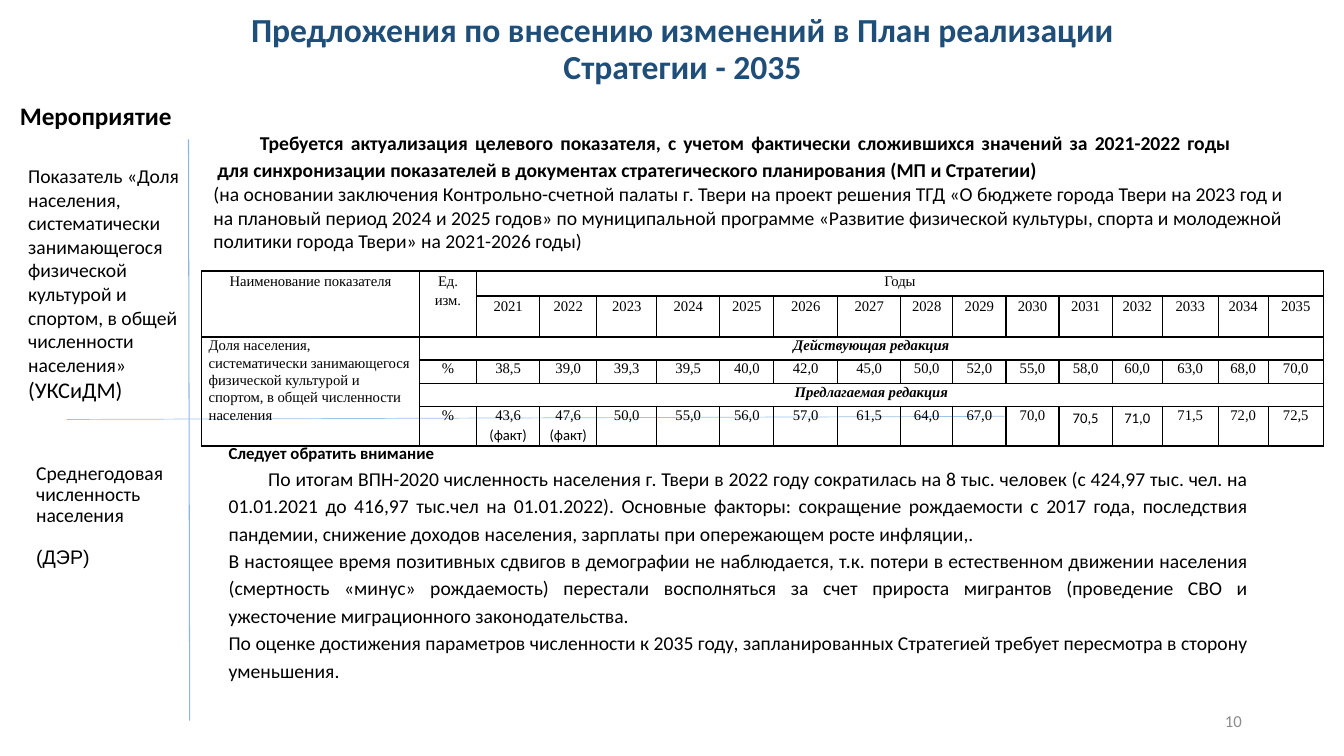
from lxml import etree
from pptx import Presentation
from pptx import util as u
from pptx.dml.color import RGBColor
from pptx.enum import shapes, text
from pptx.oxml import ns

LEFT, CENTER = text.PP_ALIGN.LEFT, text.PP_ALIGN.CENTER
RIGHT, JUSTIFY = text.PP_ALIGN.RIGHT, text.PP_ALIGN.JUSTIFY
TOP, MIDDLE = text.MSO_ANCHOR.TOP, text.MSO_ANCHOR.MIDDLE
SERIF = "Times New Roman"

YEARS = [str(year) for year in range(2021, 2036)]
CURRENT = "38,5 39,0 39,3 39,5 40,0 42,0 45,0 50,0 52,0 55,0 58,0 60,0 63,0 68,0 70,0".split()
PROPOSED = "43,6 47,6 50,0 55,0 56,0 57,0 61,5 64,0 67,0 70,0 70,5 71,0 71,5 72,0 72,5".split()
ACTUAL_YEARS = ("2021", "2022")
SANS_YEARS = ("2031", "2032")
COLUMNS = [5.49, 1.44, 1.59, 1.44, 1.51, 1.59, 1.36, 1.61, 1.59,
           1.31, 1.34, 1.34, 1.34, 1.26, 1.41, 1.26, 1.39]
ROWS = [0.63, 1.03, 0.58, 0.6, 0.58, 0.99]


def color(value):
    return RGBColor.from_string(value)


def run(content, size=14, **style):
    return dict(content=content, size=size, **style)


def para(*runs, **layout):
    return dict(runs=runs, **layout)


class SlideBuilder:
    font = "Calibri"
    ink = "000000"

    def __init__(self, slide):
        self.slide = slide

    def fill_frame(self, frame, paragraphs):
        """Fill a text frame with paragraphs, run by run."""
        for number, item in enumerate(paragraphs):
            paragraph = frame.add_paragraph() if number else frame.paragraphs[0]
            paragraph.alignment = item.get("align", LEFT)
            paragraph.line_spacing = item.get("spacing", 1.0)
            paragraph.space_before = u.Pt(item.get("before", 0))
            paragraph.space_after = u.Pt(item.get("after", 0))
            if "indent" in item:
                margin, first = item["indent"]
                properties = paragraph._p.get_or_add_pPr()
                properties.set("marL", str(u.Cm(margin)))
                properties.set("indent", str(u.Cm(first)))
            for part in item["runs"]:
                piece = paragraph.add_run()
                piece.text = part["content"]
                piece.font.size = u.Pt(part["size"])
                piece.font.name = part.get("font", self.font)
                piece.font.bold = part.get("bold", False)
                piece.font.italic = part.get("italic", False)
                piece.font.color.rgb = color(part.get("ink", self.ink))

    def place(self, shape, box):
        shape.left, shape.top, shape.width, shape.height = map(u.Cm, box)

    def title(self, box, paragraphs):
        shape = self.slide.shapes.title
        self.place(shape, box)
        shape.text_frame.auto_size = text.MSO_AUTO_SIZE.NONE
        shape.text_frame.vertical_anchor = MIDDLE
        self.fill_frame(shape.text_frame, paragraphs)

    def text(self, box, paragraphs, anchor=TOP, wrap=True, inset=0.13):
        shape = self.slide.shapes.add_textbox(*map(u.Cm, box))
        frame = shape.text_frame
        frame.word_wrap = wrap
        frame.vertical_anchor = anchor
        frame.margin_top = u.Cm(inset)
        self.fill_frame(frame, paragraphs)

    def line(self, start, end, ink, width):
        connector = self.slide.shapes.add_connector(
            shapes.MSO_CONNECTOR.STRAIGHT, *map(u.Cm, start + end))
        connector.line.color.rgb = color(ink)
        connector.line.width = u.Pt(width)
        etree.SubElement(connector._element.spPr, ns.qn("a:effectLst"))

    def table(self, left, top, columns, rows, border=None):
        """Add an unfilled table; without a border colour its edges are hidden."""
        frame = self.slide.shapes.add_table(
            len(rows), len(columns), u.Cm(left), u.Cm(top),
            u.Cm(sum(columns)), u.Cm(sum(rows)))
        table = frame.table
        table.first_row = table.horz_banding = False
        for column, width in zip(table.columns, columns):
            column.width = u.Cm(width)
        for row, height in zip(table.rows, rows):
            row.height = u.Cm(height)
        for cell in table.iter_cells():
            self.edges(cell, border)
            cell.fill.background()
        return table

    def edges(self, cell, ink):
        properties = cell._tc.get_or_add_tcPr()
        for side in ("lnL", "lnR", "lnT", "lnB"):
            edge = etree.SubElement(properties, ns.qn("a:" + side), w=str(u.Pt(1)))
            if ink:
                fill = etree.SubElement(edge, ns.qn("a:solidFill"))
                etree.SubElement(fill, ns.qn("a:srgbClr"), val=ink)
            else:
                etree.SubElement(edge, ns.qn("a:noFill"))

    def cell(self, cell, paragraphs, side=0.18):
        cell.margin_left = cell.margin_right = u.Cm(side)
        cell.margin_top = cell.margin_bottom = 0
        self.fill_frame(cell.text_frame, paragraphs)

    def text_table(self, left, top, width, height, paragraphs):
        table = self.table(left, top, [width], [height])
        self.cell(table.cell(0, 0), paragraphs, side=0.3)


def indicator_table(builder):
    table = builder.table(5.08, 6.83, COLUMNS, ROWS, border="000000")

    def put(row, column, content, rows=1, columns=1, align=CENTER, **style):
        cell = table.cell(row, column)
        if rows * columns > 1:
            cell.merge(table.cell(row + rows - 1, column + columns - 1))
        style = {"font": SERIF, **style}
        spacing = 1.15 if row < 2 else 1.06
        builder.cell(cell, [para(run(content, 10.5, **style), align=align, spacing=spacing)])

    put(0, 0, "Наименование показателя", rows=2)
    put(0, 1, "Ед. изм.", rows=2)
    put(0, 2, "Годы", columns=len(YEARS))
    put(2, 0, "Доля населения, систематически занимающегося физической культурой "
        "и спортом, в общей численности населения", rows=4, align=LEFT)
    put(2, 1, "Действующая редакция", columns=16, bold=True, italic=True)
    put(4, 1, "Предлагаемая редакция", columns=16, bold=True, italic=True)
    put(3, 1, "%")
    put(5, 1, "%")
    for column, (year, current, proposed) in enumerate(zip(YEARS, CURRENT, PROPOSED), 2):
        put(1, column, year)
        put(3, column, current)
        sans = dict(align=CENTER, spacing=1.15, after=10)
        if year in SANS_YEARS:
            paragraphs = [para(run(proposed, 10.5), **sans)]
        else:
            paragraphs = [para(run(proposed, 10.5, font=SERIF), align=CENTER, spacing=1.06)]
        if year in ACTUAL_YEARS:
            paragraphs.append(para(run("(факт)", 10.5), **sans))
        builder.cell(table.cell(5, column), paragraphs)


def main():
    presentation = Presentation()
    presentation.slide_width, presentation.slide_height = u.Cm(33.87), u.Cm(19.05)
    builder = SlideBuilder(presentation.slides.add_slide(presentation.slide_layouts[5]))

    builder.text((23.93, 17.65, 7.62, 1.02),
                 [para(run("10", 12, ink="8C8C8C"), align=RIGHT)], anchor=MIDDLE)
    builder.title((1.07, 0.51, 32.26, 1.5), [
        para(run(line, 24, bold=True, ink="1F4E79"), align=CENTER, spacing=0.9)
        for line in ("Предложения по внесению изменений в План реализации", " Стратегии - 2035 ")])
    builder.line((4.75, 3.51), (4.78, 18.16), "8EB4E3", 0.75)
    builder.line((25.32, 10.49), (1.68, 10.57), "9DC3E6", 0.5)

    builder.text((0.25, 2.39, 4.5, 1.02), [para(run("Мероприятие", 18, bold=True))], wrap=False)
    builder.text((0.46, 4.01, 4.47, 7.09), [para(
        run("Показатель «Доля населения, систематически занимающегося физической "
            "культурой и спортом, в общей численности населения» "),
        run("(УКСиДМ)", 16))])

    builder.text_table(5.13, 3.23, 26.21, 1.37, [para(
        run("Требуется актуализация целевого показателя, с учетом фактически сложившихся "
            "значений за 2021-2022 годы для синхронизации показателей в документах "
            "стратегического планирования (МП и Стратегии)", bold=True),
        align=JUSTIFY, spacing=1.15, indent=(0.05, 1.07))])
    builder.text((5.13, 3.23, 27.81, 5.31), [para(
        run("(на основании заключения Контрольно-счетной палаты г. Твери на проект решения ТГД "
            "«О бюджете города Твери на 2023 год и на плановый период 2024 и 2025 годов» "
            "по муниципальной программе «Развитие физической культуры, спорта и молодежной "
            "политики города Твери» на 2021-2026 годы)"))], inset=1.36)
    indicator_table(builder)

    builder.text((0.66, 11.53, 4.47, 2.95), [
        para(run("Среднегодовая численность населения"), spacing=0.9),
        para(run("(ДЭР)", font="Arial"), spacing=0.9, before=15)], anchor=MIDDLE)
    body = dict(align=JUSTIFY, spacing=1.15)
    builder.text_table(5.46, 11.1, 26.31, 6.05, [
        para(run("Следует обратить внимание", 12, bold=True), **body),
        para(run("По итогам ВПН-2020 численность населения г. Твери в 2022 году сократилась "
                 "на 8 тыс. человек (с 424,97 тыс. чел. на 01.01.2021 до 416,97 тыс.чел на "
                 "01.01.2022). Основные факторы: сокращение рождаемости с 2017 года, последствия "
                 "пандемии, снижение доходов населения, зарплаты при опережающем росте "
                 "инфляции,."), indent=(0, 1), **body),
        para(run("В настоящее время позитивных сдвигов в демографии не наблюдается, т.к. потери "
                 "в естественном движении населения (смертность «минус» рождаемость) перестали "
                 "восполняться за счет прироста мигрантов (проведение СВО и ужесточение "
                 "миграционного законодательства."), **body),
        para(run("По оценке достижения параметров численности к 2035 году, запланированных "
                 "Стратегией требует пересмотра в сторону уменьшения. "), **body)])
    presentation.save("out.pptx")


if __name__ == "__main__":
    main()
